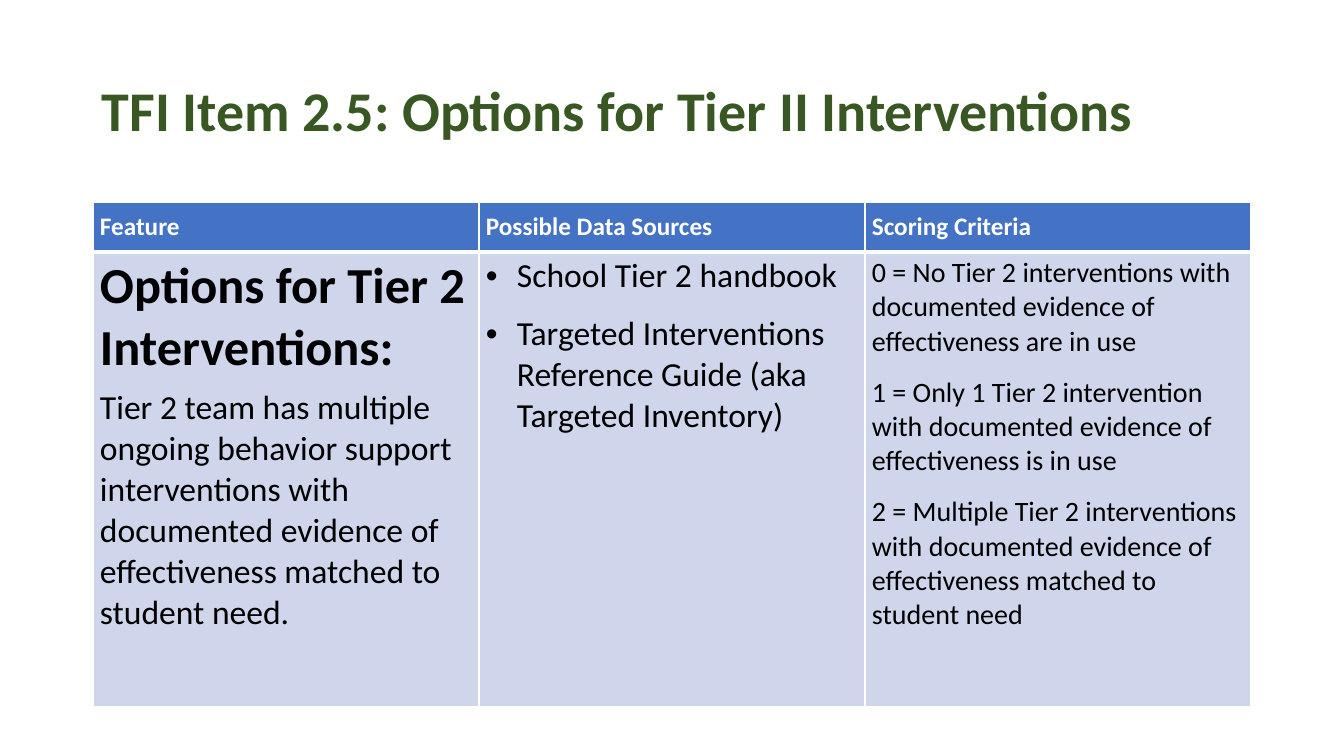
"""Build the slide on TFI Item 2.5: options for Tier II interventions."""
from lxml.etree import SubElement, fromstring
from pptx import Presentation
from pptx.dml.color import RGBColor
from pptx.enum.text import MSO_ANCHOR
from pptx.oxml.ns import nsdecls, qn
from pptx.util import Pt

PX = 12192000 / 1344
THEME = {
    "font": "Calibri",
    "title": "385723", "header": "4472C4", "body": "CFD5EA",
    "light": "FFFFFF", "dark": "000000",
    "title_size": 40, "header_size": 18, "lead_size": 36,
    "text_size": 24, "score_size": 20,
}
BULLET_INDENT = 31


def px(length):
    return round(length * PX)


def style(para, size, color, bold=False, after=0):
    para.space_after = Pt(after)
    for span in para.runs:
        span.font.name = THEME["font"]
        span.font.size = Pt(THEME[size])
        span.font.bold = bold
        span.font.color.rgb = RGBColor.from_string(THEME[color])


COLUMNS = [
    ("Feature", 6, False, [
        ("Options for Tier 2 Interventions:", "lead_size", True),
        ("Tier 2 team has multiple ongoing behavior support interventions with "
         "documented evidence of effectiveness matched to student need.", "text_size", False),
    ]),
    ("Possible Data Sources", 12, True, [
        ("School Tier 2 handbook", "text_size", False),
        ("Targeted Interventions Reference Guide (aka Targeted Inventory)", "text_size", False),
    ]),
    ("Scoring Criteria", 12, False, [
        ("0 = No Tier 2 interventions with documented evidence of effectiveness "
         "are in use", "score_size", False),
        ("1 = Only 1 Tier 2 intervention with documented evidence of effectiveness "
         "is in use", "score_size", False),
        ("2 = Multiple Tier 2 interventions with documented evidence of effectiveness "
         "matched to student need", "score_size", False),
    ]),
]

deck = Presentation()
deck.slide_width, deck.slide_height = px(1344), px(756)
page = deck.slides.add_slide(deck.slide_layouts[6])

title = page.shapes.add_textbox(px(92), px(40), px(1159), px(146)).text_frame
title.word_wrap = True
title.vertical_anchor = MSO_ANCHOR.MIDDLE
title.text = "TFI Item 2.5: Options for Tier II Interventions"
title.paragraphs[0].line_spacing = 0.9
style(title.paragraphs[0], "title_size", "title", bold=True)

table = page.shapes.add_table(2, 3, px(93), px(202), px(1158), px(505)).table
table.horz_banding = False
table.rows[0].height, table.rows[1].height = px(50), px(455)

for index, (heading, after, bulleted, entries) in enumerate(COLUMNS):
    table.columns[index].width = px(386)
    header, body = table.cell(0, index), table.cell(1, index)
    header.text = heading
    header.vertical_anchor = MSO_ANCHOR.MIDDLE
    style(header.text_frame.paragraphs[0], "header_size", "light", bold=True)

    body.text = "\n".join(entry[0] for entry in entries)
    for para, (_, size, bold) in zip(body.text_frame.paragraphs, entries):
        style(para, size, "dark", bold, after)
        if bulleted:
            properties = para._p.get_or_add_pPr()
            properties.set("marL", str(px(BULLET_INDENT)))
            properties.set("indent", str(-px(BULLET_INDENT)))
            SubElement(properties, qn("a:buFont")).set("typeface", "Arial")
            SubElement(properties, qn("a:buChar")).set("char", "•")

    for cell, fill, top, bottom in ((header, "header", 1, 3), (body, "body", 3, 1)):
        cell.margin_left = cell.margin_right = px(7)
        cell.margin_top = cell.margin_bottom = px(4)
        cell.fill.solid()
        cell.fill.fore_color.rgb = RGBColor.from_string(THEME[fill])
        edges = (("lnL", 1), ("lnR", 1), ("lnT", top), ("lnB", bottom))
        for place, (edge, width) in enumerate(edges):
            border = fromstring(
                f'<a:{edge} {nsdecls("a")} w="{Pt(width)}"><a:solidFill>'
                f'<a:srgbClr val="{THEME["light"]}"/></a:solidFill></a:{edge}>')
            cell._tc.get_or_add_tcPr().insert(place, border)

deck.save("out.pptx")
